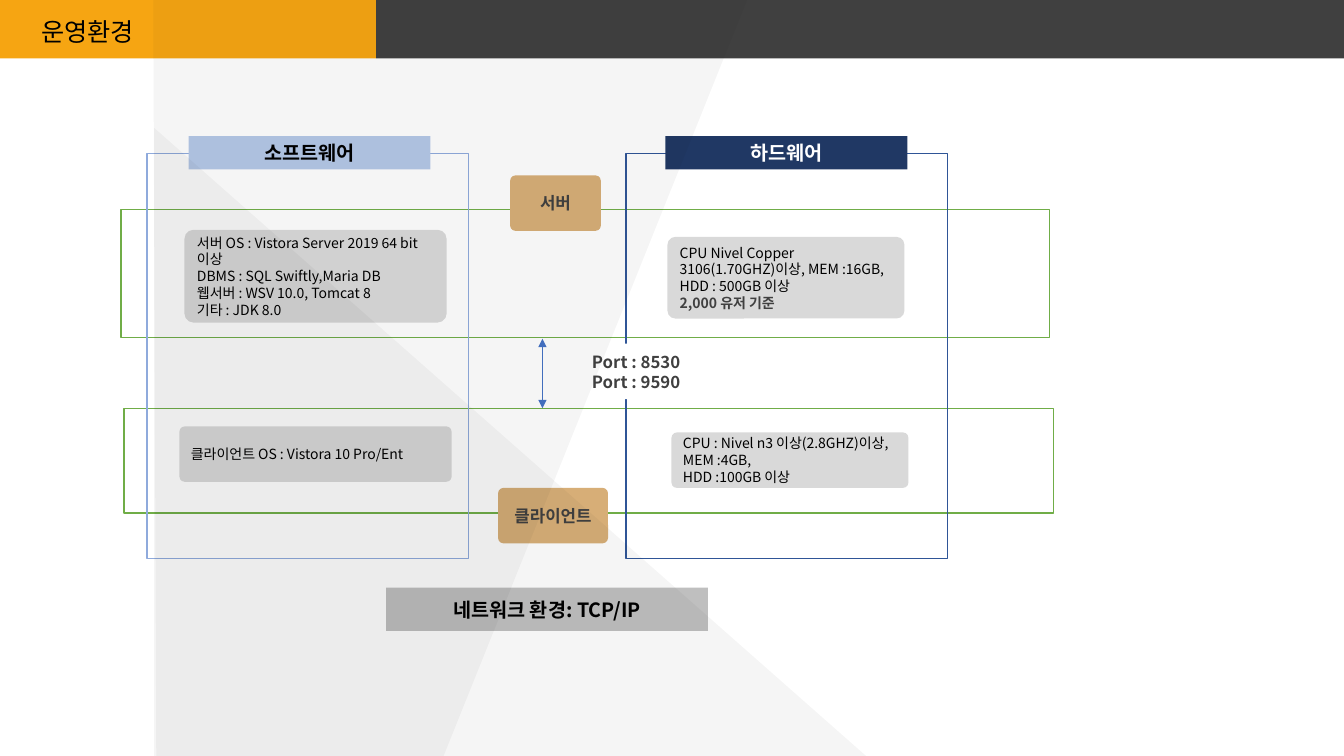
from lxml.etree import SubElement
from pptx import Presentation
from pptx.dml.color import RGBColor
from pptx.enum.shapes import MSO_CONNECTOR, MSO_SHAPE
from pptx.enum.text import MSO_ANCHOR, MSO_AUTO_SIZE, PP_ALIGN
from pptx.oxml.ns import qn
from pptx.util import Inches, Pt

FONT = "Noto Sans CJK KR"
BLACK = RGBColor(0x00, 0x00, 0x00)
WHITE = RGBColor(0xFF, 0xFF, 0xFF)
DARK = RGBColor(0x40, 0x40, 0x40)
ORANGE = RGBColor(0xF6, 0xA5, 0x12)
GREEN = RGBColor(0x70, 0xAD, 0x47)
LIGHT_BLUE = RGBColor(0xB4, 0xC7, 0xE7)
MID_BLUE = RGBColor(0x8F, 0xAA, 0xDC)
DEEP_BLUE = RGBColor(0x2F, 0x55, 0x97)
NAVY = RGBColor(0x20, 0x38, 0x64)
ARROW_BLUE = RGBColor(0x44, 0x72, 0xC4)
GRAY = RGBColor(0xBF, 0xBF, 0xBF)
LIGHT_GRAY = RGBColor(0xD9, 0xD9, 0xD9)
TAN = RGBColor(0xD7, 0xAE, 0x77)
SHADE = RGBColor(0x18, 0x17, 0x17)


class SlideBuilder:
    """Draws styled elements on one slide."""

    def __init__(self, prs):
        self.s = prs.slides.add_slide(prs.slide_layouts[5])

    def set_text(self, sp, lines, size, color, bold=False, align=PP_ALIGN.CENTER):
        tf = sp.text_frame
        tf.text = "\n".join(lines)
        tf.word_wrap = True
        tf.vertical_anchor = MSO_ANCHOR.MIDDLE
        for p in tf.paragraphs:
            p.alignment = align
            p.line_spacing = Pt(size * 1.2)
            for r in p.runs:
                r.font.name = FONT
                r.font.size = Pt(size)
                r.font.bold = bold
                r.font.color.rgb = color
                SubElement(r.font._element, qn("a:ea"), typeface=FONT)

    def title(self, text, box):
        sp = self.s.shapes.title
        sp.left, sp.top, sp.width, sp.height = map(Inches, box)
        self.set_text(sp, [text], 18, BLACK, align=PP_ALIGN.LEFT)
        tf = sp.text_frame
        tf.word_wrap = False
        tf.auto_size = MSO_AUTO_SIZE.NONE
        tf.vertical_anchor = MSO_ANCHOR.TOP
        self.s.shapes._spTree.append(sp._element)

    def box(self, box, fill=None, line=None, kind=MSO_SHAPE.RECTANGLE):
        sp = self.s.shapes.add_shape(kind, *map(Inches, box))
        sp.shadow.inherit = False
        if fill is None:
            sp.fill.background()
        else:
            sp.fill.solid()
            sp.fill.fore_color.rgb = fill
        if line is None:
            sp.line.fill.background()
        else:
            sp.line.color.rgb = line
            sp.line.width = Pt(1)
        return sp

    def label(self, text, box, fill, color):
        self.set_text(self.box(box, fill), [text], 14, color, bold=True)

    def card(self, box, fill):
        sp = self.box(box, fill, kind=MSO_SHAPE.ROUNDED_RECTANGLE)
        sp.adjustments[0] = 0.096
        return sp

    def tag(self, lines, box, fill):
        self.set_text(self.card(box, fill), lines, 12, DARK, bold=True)

    def details(self, lines, box):
        sp = self.card(box, LIGHT_GRAY)
        self.set_text(sp, lines, 10, BLACK, align=PP_ALIGN.LEFT)
        return sp

    def arrow(self, x, top, bottom):
        cn = self.s.shapes.add_connector(
            MSO_CONNECTOR.STRAIGHT, Inches(x), Inches(top), Inches(x), Inches(bottom))
        cn.line.color.rgb = ARROW_BLUE
        cn.line.width = Pt(0.5)
        ln = cn.line._get_or_add_ln()
        for end in ("a:headEnd", "a:tailEnd"):
            SubElement(ln, qn(end), type="triangle")
        SubElement(cn._element.spPr, qn("a:effectLst"))

    def shade(self, points):
        start, *rest = [(Inches(x), Inches(y)) for x, y in points]
        fb = self.s.shapes.build_freeform(*start)
        fb.add_line_segments(rest, close=True)
        sp = fb.convert_to_shape()
        sp.shadow.inherit = False
        sp.line.fill.background()
        sp.fill.solid()
        sp.fill.fore_color.rgb = SHADE
        clr = sp._element.spPr.find(qn("a:solidFill"))[0]
        SubElement(clr, qn("a:alpha"), val="4000")


def main():
    prs = Presentation()
    prs.slide_width, prs.slide_height = Inches(13.33), Inches(7.5)
    b = SlideBuilder(prs)

    b.box((3.73, 0, 9.6, 0.58), DARK)
    b.box((0, 0, 3.73, 0.58), ORANGE)
    b.title("운영환경", (0.31, 0.11, 1.21, 0.4))

    b.box((1.23, 4.05, 9.22, 1.04), WHITE, GREEN)
    b.box((1.2, 2.08, 9.21, 1.27), WHITE, GREEN)
    for text, x, label_x, line, fill, color in (
        ("소프트웨어", 1.46, 1.87, MID_BLUE, LIGHT_BLUE, BLACK),
        ("하드웨어", 6.21, 6.6, DEEP_BLUE, NAVY, WHITE),
    ):
        b.box((x, 1.52, 3.19, 4.02), line=line)
        b.label(text, (label_x, 1.35, 2.4, 0.33), fill, color)
    b.label("네트워크 환경: TCP/IP", (3.83, 5.83, 3.19, 0.43), GRAY, BLACK)

    b.tag(["서버"], (5.06, 1.74, 0.9, 0.55), TAN)
    b.tag(["클라이언트"], (4.94, 4.84, 1.09, 0.55), TAN)

    server = b.details(
        ["CPU Nivel Copper 3106(1.70GHZ)이상, MEM :16GB,", "HDD : 500GB 이상",
         "2,000 유저 기준"], (6.62, 2.35, 2.35, 0.81))
    for r in server.text_frame.paragraphs[-1].runs:
        r.font.bold = True
        r.font.color.rgb = DARK
    b.details(["CPU : Nivel n3 이상(2.8GHZ)이상, MEM :4GB,", "HDD :100GB 이상"],
              (6.66, 4.29, 2.35, 0.55))
    b.details(["서버 OS : Vistora Server 2019 64 bit 이상", "DBMS : SQL Swiftly,Maria DB",
               "웹서버 : WSV 10.0, Tomcat 8", "기타 : JDK 8.0"],
              (1.83, 2.28, 2.6, 0.92))
    b.details(["클라이언트 OS : Vistora 10 Pro/Ent"], (1.78, 4.23, 2.7, 0.55))

    b.arrow(5.38, 3.36, 4.05)
    b.tag(["Port : 8530", "Port : 9590"], (5.51, 3.41, 1.6, 0.55), WHITE)

    b.shade([(1.55, 7.5), (1.52, 0), (7.41, 0), (4.4, 7.5)])
    b.shade([(1.53, 7.5), (1.53, 1.27), (8.59, 7.5)])
    prs.save("out.pptx")


if __name__ == "__main__":
    main()
